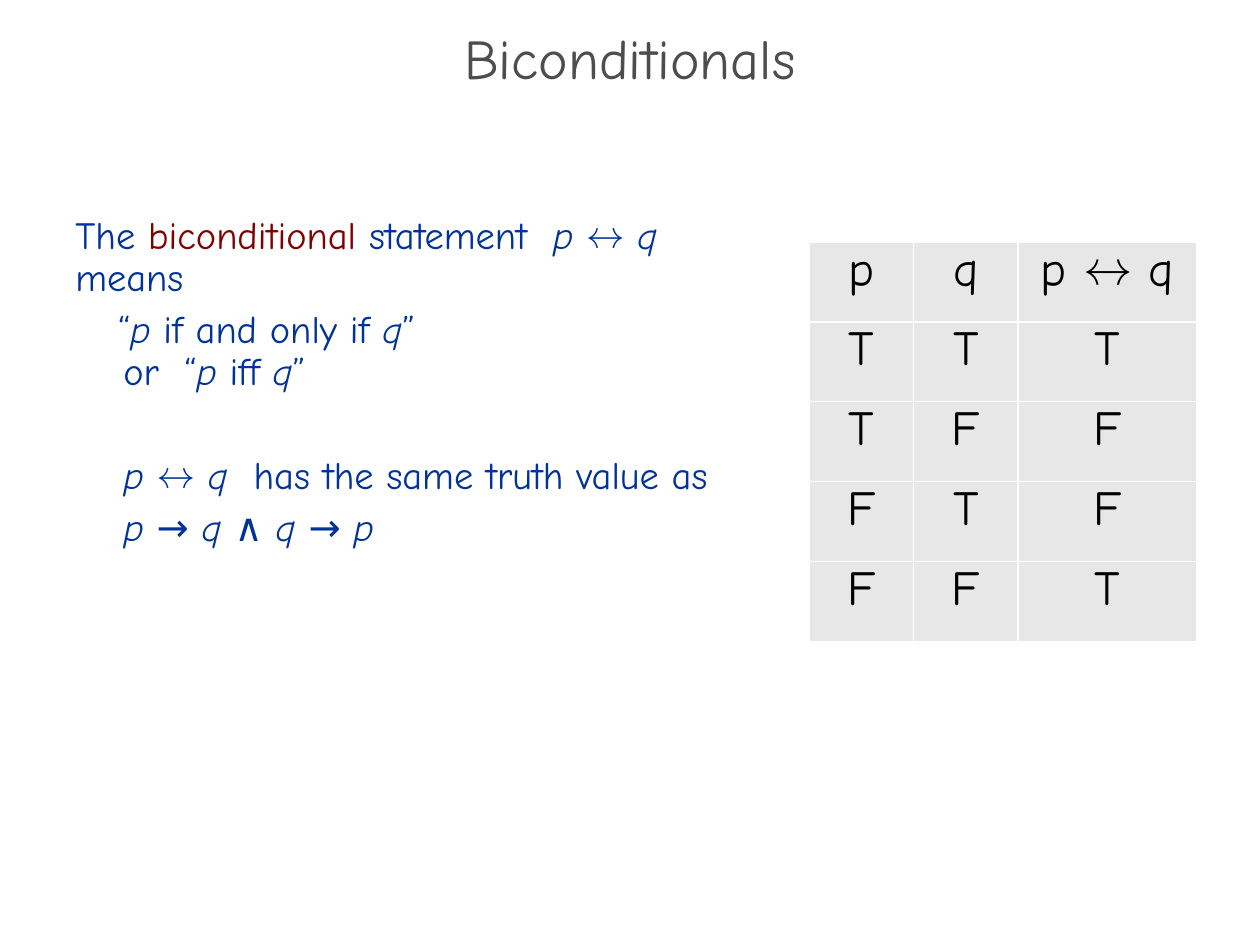
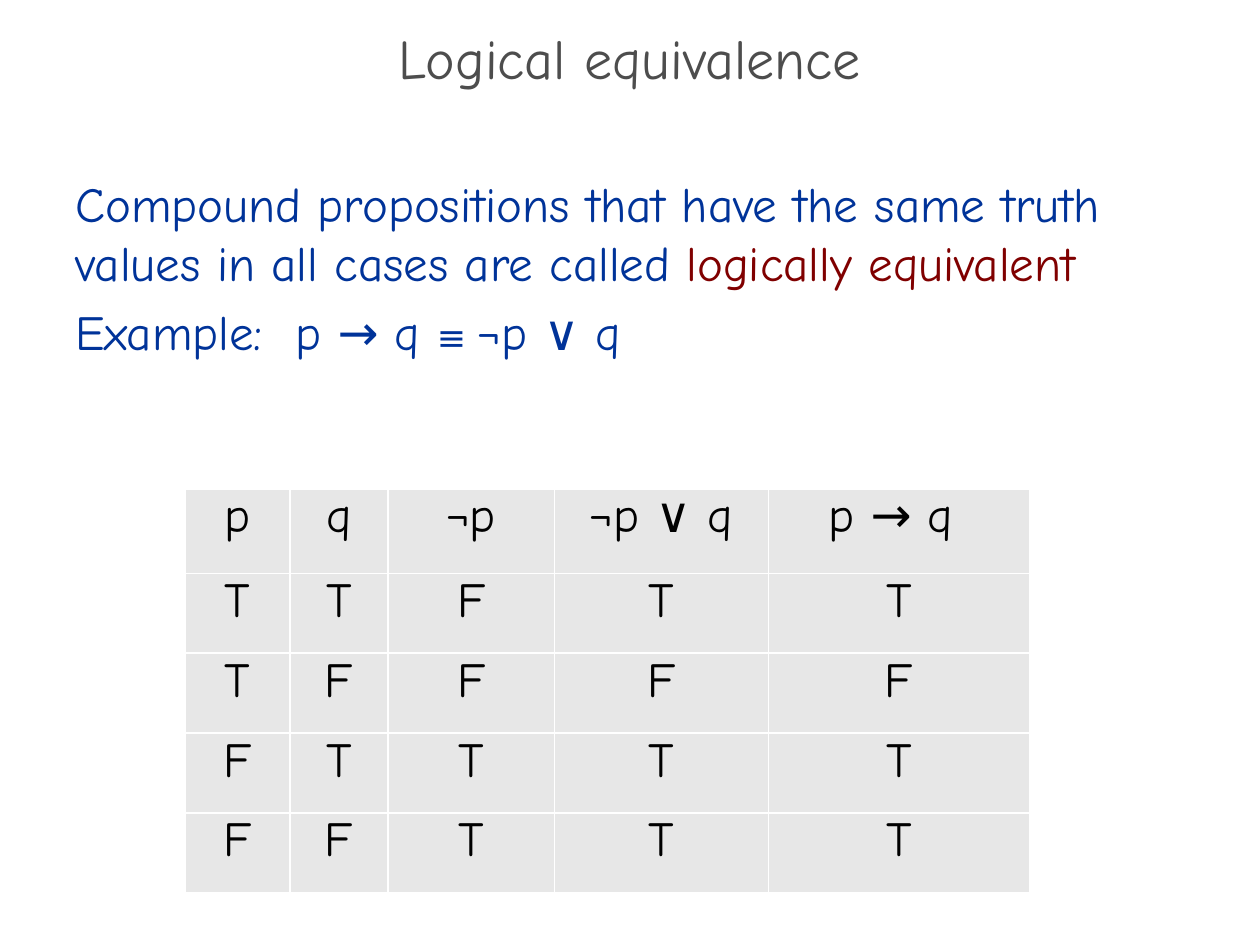
from dataclasses import dataclass
from typing import NamedTuple

from lxml.etree import SubElement
from pptx import Presentation
from pptx.dml.color import RGBColor
from pptx.enum.text import MSO_ANCHOR as Anchor, PP_ALIGN as Align
from pptx.oxml.ns import qn
from pptx.util import Inches, Pt

FONT = "Comic Neue"
COLORS = {
    "title": "4D4D4D",
    "body": "003399",
    "term": "800000",
    "cell_text": "000000",
    "cell": "E7E7E7",
    "border": "FFFFFF",
}
ROW_HEIGHT = Inches(3.17) // 5


class Run(NamedTuple):
    text: str
    italic: bool = False
    color: str = "body"
    size: float | None = None


class Box(NamedTuple):
    left: float
    top: float
    width: float
    height: float


@dataclass
class Para:
    """Runs of one paragraph; a None stands for a line break."""
    runs: list[Run | None]
    margin: float = 0
    indent: float = 0
    before: float = 0


@dataclass
class Body:
    box: Box
    size: float
    line_spacing: float
    paras: list[Para]


@dataclass
class TruthTable:
    left: float
    top: float
    columns: list[float]
    header: list[str]
    rows: list[str]
    header_height: int = ROW_HEIGHT


@dataclass
class LogicSlide:
    title: str
    body: Body
    table: TruthTable


def var(text: str) -> Run:
    """A propositional variable, in italics."""
    return Run(text, italic=True)


def add_run(p, run: Run, size: float) -> None:
    r = p.add_run()
    r.text = run.text
    r.font.name = FONT
    r.font.size = Pt(run.size or size)
    r.font.italic = run.italic
    r.font.color.rgb = RGBColor.from_string(COLORS[run.color])


def add_text_frame(slide, box: Box):
    tf = slide.shapes.add_textbox(*map(Inches, box)).text_frame
    tf.word_wrap = True
    return tf


def add_title(slide, title: str) -> None:
    tf = add_text_frame(slide, Box(0, 0.27, 10, 0.5))
    tf.vertical_anchor = Anchor.MIDDLE
    p = tf.paragraphs[0]
    p.alignment = Align.CENTER
    p.line_spacing = 0.7
    add_run(p, Run(title, color="title"), 32)


def add_body(slide, body: Body) -> None:
    tf = add_text_frame(slide, body.box)
    for i, para in enumerate(body.paras):
        p = tf.add_paragraph() if i else tf.paragraphs[0]
        p.line_spacing = body.line_spacing
        p.space_before = Pt(para.before)
        p.space_after = Pt(6)
        pPr = p._p.get_or_add_pPr()
        pPr.set("marL", str(Inches(para.margin)))
        pPr.set("indent", str(Inches(para.indent)))
        for run in para.runs:
            if run is None:
                p.add_line_break()
            else:
                add_run(p, run, body.size)


def set_borders(cell) -> None:
    tcPr = cell._tc.get_or_add_tcPr()
    for i, side in enumerate(("lnL", "lnR", "lnT", "lnB")):
        ln = SubElement(tcPr, qn(f"a:{side}"), w=str(Pt(1)))
        fill = SubElement(ln, qn("a:solidFill"))
        SubElement(fill, qn("a:srgbClr"), val=COLORS["border"])
        tcPr.remove(ln)
        tcPr.insert(i, ln)


def add_truth_table(slide, spec: TruthTable) -> None:
    lines = [spec.header, *spec.rows]
    height = spec.header_height + ROW_HEIGHT * len(spec.rows)
    table = slide.shapes.add_table(
        len(lines), len(spec.columns), Inches(spec.left), Inches(spec.top),
        Inches(sum(spec.columns)), height).table
    table.first_row = table.horz_banding = False
    for column, width in zip(table.columns, spec.columns):
        column.width = Inches(width)
    for i, (row, line) in enumerate(zip(table.rows, lines)):
        row.height = ROW_HEIGHT if i else spec.header_height
        for cell, text in zip(row.cells, line):
            cell.margin_top = 0
            cell.fill.solid()
            cell.fill.fore_color.rgb = RGBColor.from_string(COLORS["cell"])
            set_borders(cell)
            p = cell.text_frame.paragraphs[0]
            p.alignment = Align.CENTER
            add_run(p, Run(text, color="cell_text"), 28)


BICONDITIONALS = LogicSlide(
    "Biconditionals",
    Body(Box(0.5, 1.67, 5.58, 4.92), 22, 0.9, [
        Para([Run("The "), Run("biconditional ", color="term"),
              Run("statement  "), var("p "), Run("↔ "), var("q "),
              Run("means")]),
        Para([Run("“"), var("p"), Run(" if and only if "), var("q"),
              Run("”"), None, Run("or  “"), var("p "), Run("iff "),
              var("q"), Run("”")], margin=0.38, indent=-0.04),
        Para([var("p "), Run("↔ "), var("q  "),
              Run("has the same truth value as")], margin=0.38, before=30),
        Para([var("p "), Run("→ "), var("q "), Run("∧ "), var("q "),
              Run("→ "), var("p")], margin=0.38),
    ]),
    TruthTable(6.42, 1.92, [0.83, 0.83, 1.42], ["p", "q", "p ↔ q"],
               ["TTT", "TFF", "FTF", "FFT"]),
)

EQUIVALENCE = LogicSlide(
    "Logical equivalence",
    Body(Box(0.5, 1.33, 9, 4.95), 28, 1.0, [
        Para([Run("Compound propositions that have the same truth values "
                  "in all cases are called "),
              Run("logically equivalent", color="term")]),
        Para([Run("Example:  p → q "), Run("≡ ", size=20), Run("¬p ∨ q")]),
    ]),
    TruthTable(1.47, 3.88, [0.83, 0.78, 1.32, 1.7, 2.07],
               ["p", "q", "¬p", "¬p ∨ q", "p → q "],
               ["TTFTT", "TFFFF", "FTTTT", "FFTTT"],
               header_height=Inches(0.67)),
)


def main() -> None:
    prs = Presentation()
    prs.slide_width, prs.slide_height = Inches(10), Inches(7.5)
    for content in (BICONDITIONALS, EQUIVALENCE):
        slide = prs.slides.add_slide(prs.slide_layouts[6])
        add_title(slide, content.title)
        add_body(slide, content.body)
        add_truth_table(slide, content.table)
    prs.save("out.pptx")


if __name__ == "__main__":
    main()
